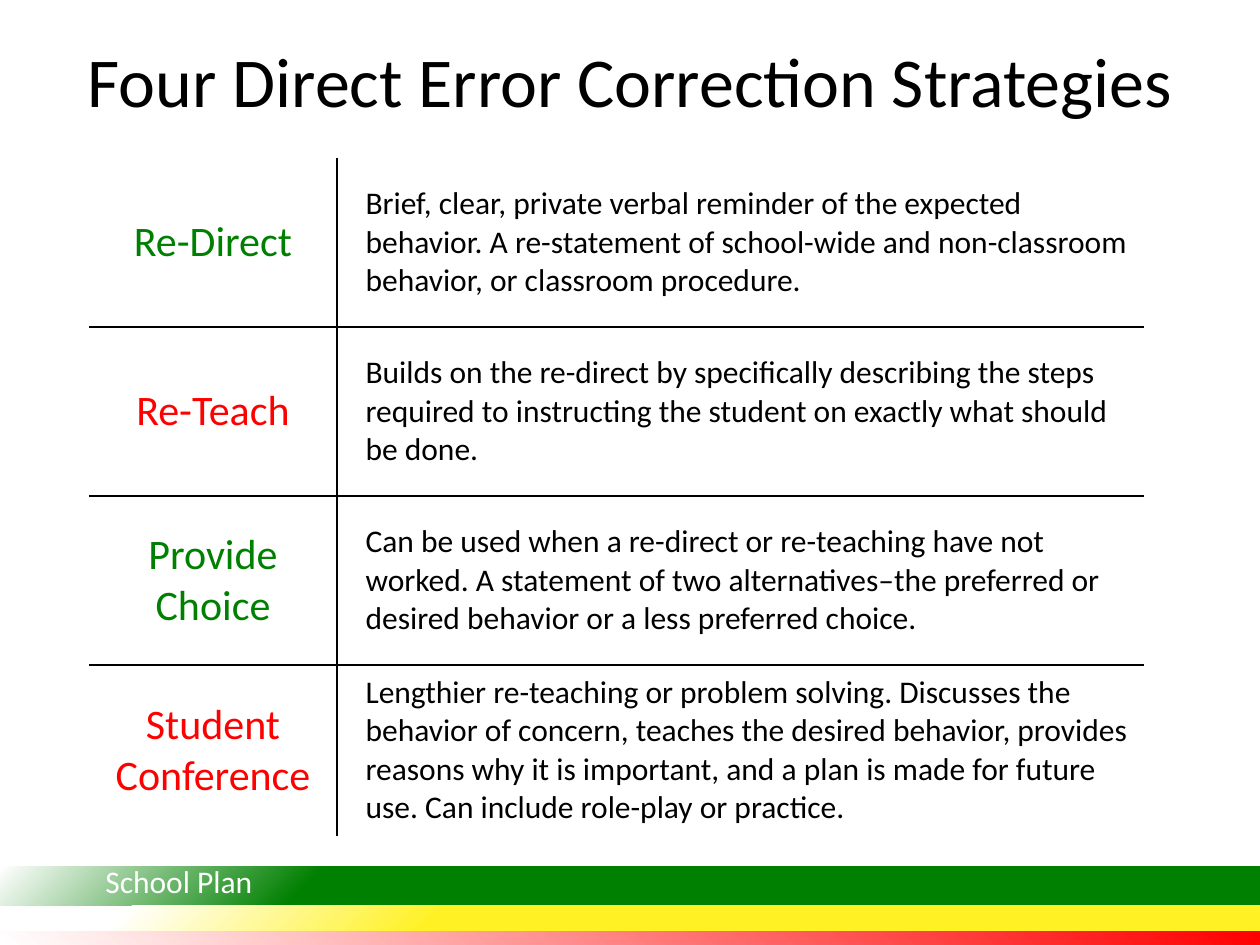
from dataclasses import dataclass
from typing import Any

from pptx import Presentation
from pptx.dml.color import RGBColor
from pptx.enum.shapes import MSO_SHAPE as Shape
from pptx.enum.text import MSO_ANCHOR as Anchor, PP_ALIGN as Align
from pptx.oxml import parse_xml
from pptx.oxml.ns import nsdecls, qn
from pptx.util import Emu, Pt

EMU_PER_PX = 914400 / 126
FONT = "Calibri"
BLACK = RGBColor(0, 0, 0)
WHITE = RGBColor(255, 255, 255)
GREEN = RGBColor(0, 128, 0)
YELLOW = RGBColor(255, 241, 35)
RED = RGBColor(255, 0, 0)

COLUMN_WIDTHS = (248, 807)
ROW_HEIGHTS = (169, 169, 169, 171)


@dataclass(frozen=True)
class Band:
    top: int
    height: int
    color: RGBColor
    solid_until: int
    white_from: int
    focus: str


@dataclass(frozen=True)
class Strategy:
    name: str
    color: RGBColor
    description: str


BANDS = (
    Band(931, 14, RED, 0, 100, 'l="100000" b="100000"'),
    Band(867, 39, GREEN, 75, 100, 'l="100000" t="100000"'),
    Band(906, 25, YELLOW, 65, 90, 'l="100000" t="100000"'),
)
STRATEGIES = (
    Strategy("Re-Direct", GREEN,
             "Brief, clear, private verbal reminder of the expected behavior. "
             "A re-statement of school-wide and non-classroom behavior, or classroom procedure."),
    Strategy("Re-Teach", RED,
             "Builds on the re-direct by specifically describing the steps required to "
             "instructing the student on exactly what should be done."),
    Strategy("Provide Choice", GREEN,
             "Can be used when a re-direct or re-teaching have not worked. A statement of two "
             "alternatives–the preferred or desired behavior or a less preferred choice."),
    Strategy("Student Conference", RED,
             "Lengthier re-teaching or problem solving. Discusses the behavior of concern, "
             "teaches the desired behavior, provides reasons why it is important, and a plan "
             "is made for future use. Can include role-play or practice."),
)


def px(length: int) -> Emu:
    return Emu(round(length * EMU_PER_PX))


def apply_format(target: Any, values: dict[str, Any]) -> None:
    for name, value in values.items():
        setattr(target, name, value)


def write_text(frame: Any, text: str, size: int, color: RGBColor, align: Align) -> Any:
    paragraph = frame.paragraphs[0]
    paragraph.alignment = align
    run = paragraph.add_run()
    run.text = text
    apply_format(run.font, {"name": FONT, "size": Pt(size), "bold": False})
    run.font.color.rgb = color
    return run


def draw_band(slide: Any, band: Band) -> None:
    shape = slide.shapes.add_shape(Shape.RECTANGLE, 0, px(band.top), px(1260), px(band.height))
    shape.shadow.inherit = False
    shape.line.fill.background()
    shape.fill.gradient()
    properties = shape._element.spPr
    properties.replace(properties.find(qn("a:gradFill")), parse_xml(
        f'<a:gradFill {nsdecls("a")} rotWithShape="1"><a:gsLst>'
        f'<a:gs pos="{band.solid_until * 1000}"><a:srgbClr val="{band.color}"/></a:gs>'
        f'<a:gs pos="{band.white_from * 1000}"><a:srgbClr val="{WHITE}"/></a:gs>'
        f'</a:gsLst><a:path path="circle"><a:fillToRect {band.focus}/></a:path></a:gradFill>'))


def draw_footer_label(slide: Any) -> None:
    box = slide.shapes.add_textbox(px(93), px(856), px(242), px(50))
    box.text_frame.word_wrap = True
    run = write_text(box.text_frame, "School Plan", 18, WHITE, Align.LEFT)
    run.font.fill._xPr.find(qn("a:solidFill")).addnext(parse_xml(
        f'<a:effectLst {nsdecls("a")}><a:outerShdw blurRad="38100" dist="38100" dir="2700000">'
        f'<a:srgbClr val="{BLACK}"><a:alpha val="43000"/></a:srgbClr></a:outerShdw></a:effectLst>'))


def set_borders(cell: Any, visible: dict[str, bool]) -> None:
    properties = cell._tc.get_or_add_tcPr()
    for index, (side, shown) in enumerate(visible.items()):
        fill = f'<a:solidFill><a:srgbClr val="{BLACK}"/></a:solidFill>' if shown else "<a:noFill/>"
        properties.insert(index, parse_xml(
            f'<a:ln{side} {nsdecls("a")} w="{Pt(1)}">{fill}</a:ln{side}>'))


def draw_strategies(slide: Any) -> None:
    rows, columns = len(STRATEGIES), len(COLUMN_WIDTHS)
    table = slide.shapes.add_table(rows, columns, px(89), px(158),
                                   px(sum(COLUMN_WIDTHS)), px(sum(ROW_HEIGHTS))).table
    apply_format(table, {"first_row": False, "horz_banding": False})
    for column, width in zip(table.columns, COLUMN_WIDTHS):
        column.width = px(width)
    for row, height in zip(table.rows, ROW_HEIGHTS):
        row.height = px(height)
    for row, strategy in enumerate(STRATEGIES):
        name, description = table.cell(row, 0), table.cell(row, 1)
        write_text(name.text_frame, strategy.name, 24, strategy.color, Align.CENTER)
        write_text(description.text_frame, strategy.description, 18, BLACK, Align.LEFT)
        indent = description.text_frame.paragraphs[0]._p.get_or_add_pPr()
        indent.set("marL", str(px(16)))
        indent.set("indent", "0")
        for column, cell in enumerate((name, description)):
            cell.vertical_anchor = Anchor.MIDDLE
            cell.fill.background()
            set_borders(cell, {"L": column > 0, "R": column < columns - 1,
                               "T": row > 0, "B": row < rows - 1})


def main() -> None:
    presentation = Presentation()
    apply_format(presentation, {"slide_width": px(1260), "slide_height": px(945)})
    slide = presentation.slides.add_slide(presentation.slide_layouts[5])
    for band in BANDS:
        draw_band(slide, band)
    draw_footer_label(slide)
    title = slide.shapes.title
    apply_format(title, {"left": px(63), "top": 0, "width": px(1134), "height": px(158)})
    apply_format(title.text_frame, {"vertical_anchor": Anchor.MIDDLE, "word_wrap": True})
    write_text(title.text_frame, "Four Direct Error Correction Strategies", 40, BLACK, Align.CENTER)
    draw_strategies(slide)
    presentation.save("out.pptx")


if __name__ == "__main__":
    main()
